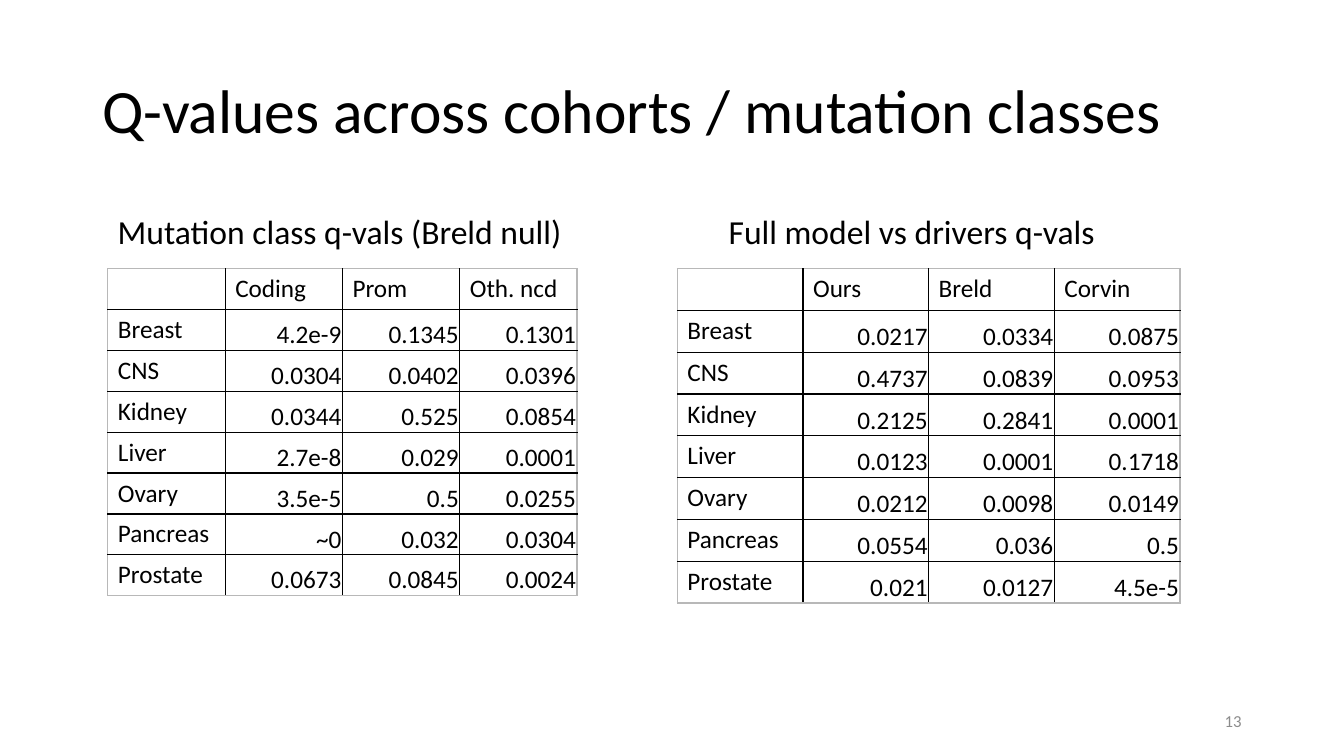
from dataclasses import dataclass

from lxml import etree
from pptx import Presentation
from pptx import util as u
from pptx.dml.color import RGBColor
from pptx.enum import text
from pptx.oxml import ns
from pptx.slide import Slide
from pptx.table import _Cell as Cell
from pptx.text.text import _Paragraph as Paragraph

BLACK = RGBColor(0x00, 0x00, 0x00)
GRAY = RGBColor(0x8C, 0x8C, 0x8C)
FRAME_GRAY = RGBColor(0xB8, 0xB8, 0xB8)
FONT = "Calibri"
TABLE_TOP = 191.9
BORDER_WIDTH = 1
COHORTS = ["Breast", "CNS", "Kidney", "Liver", "Ovary", "Pancreas", "Prostate"]


@dataclass
class Label:
    wording: str
    left: float
    top: float
    width: float
    height: float
    size: float
    color: RGBColor = BLACK
    anchor: text.MSO_ANCHOR = text.MSO_ANCHOR.TOP
    alignment: text.PP_ALIGN = text.PP_ALIGN.LEFT
    line_spacing: float = 1.0


@dataclass
class QValueTable:
    left: float
    column_width: float
    row_height: float
    classes: list[str]
    values: list[list[str]]  # one list per cohort


LABELS = [
    Label("Q-values across cohorts / mutation classes", 66, 28.8, 828, 104.4, 44,
          anchor=text.MSO_ANCHOR.MIDDLE, line_spacing=0.9),
    Label("13", 678, 500.5, 216, 28.75, 12, GRAY,
          text.MSO_ANCHOR.MIDDLE, text.PP_ALIGN.RIGHT),
    Label("Mutation class q-vals (Breld null)", 77.04, 146.88, 340.56, 36, 24),
    Label("Full model vs drivers q-vals", 513.36, 146.88, 298.8, 36, 24),
]

TABLES = [
    QValueTable(77.04, 83.8, 29.2, ["Coding", "Prom", "Oth. ncd"], [
        ["4.2e-9", "0.1345", "0.1301"],
        ["0.0304", "0.0402", "0.0396"],
        ["0.0344", "0.525", "0.0854"],
        ["2.7e-8", "0.029", "0.0001"],
        ["3.5e-5", "0.5", "0.0255"],
        ["~0", "0.032", "0.0304"],
        ["0.0673", "0.0845", "0.0024"],
    ]),
    QValueTable(483.84, 89.75, 29.86, ["Ours", "Breld", "Corvin"], [
        ["0.0217", "0.0334", "0.0875"],
        ["0.4737", "0.0839", "0.0953"],
        ["0.2125", "0.2841", "0.0001"],
        ["0.0123", "0.0001", "0.1718"],
        ["0.0212", "0.0098", "0.0149"],
        ["0.0554", "0.036", "0.5"],
        ["0.021", "0.0127", "4.5e-5"],
    ]),
]


def style_paragraph(paragraph: Paragraph, size: float, color: RGBColor) -> None:
    paragraph.font.name = FONT
    paragraph.font.size = u.Pt(size)
    paragraph.font.color.rgb = color


def add_label(slide: Slide, label: Label) -> None:
    shape = slide.shapes.add_textbox(u.Pt(label.left), u.Pt(label.top),
                                     u.Pt(label.width), u.Pt(label.height))
    frame = shape.text_frame
    frame.word_wrap = True
    frame.vertical_anchor = label.anchor
    paragraph = frame.paragraphs[0]
    paragraph.text = label.wording
    paragraph.alignment = label.alignment
    paragraph.line_spacing = label.line_spacing
    style_paragraph(paragraph, label.size, label.color)


def add_borders(cell: Cell, outer_sides: dict[str, bool]) -> None:
    properties = cell._tc.get_or_add_tcPr()
    # Border lines must precede the cell fill
    for position, (side, is_outer) in enumerate(outer_sides.items()):
        line = etree.Element(ns.qn(side), w=str(u.Pt(BORDER_WIDTH)))
        fill = etree.SubElement(line, ns.qn("a:solidFill"))
        color = FRAME_GRAY if is_outer else BLACK
        etree.SubElement(fill, ns.qn("a:srgbClr"), val=str(color))
        properties.insert(position, line)


def fill_cell(cell: Cell, wording: str, is_value: bool) -> None:
    cell.fill.background()
    paragraph = cell.text_frame.paragraphs[0]
    paragraph.text = wording
    style_paragraph(paragraph, 18, BLACK)
    if is_value:
        paragraph.alignment = text.PP_ALIGN.RIGHT
        cell.vertical_anchor = text.MSO_ANCHOR.BOTTOM
        cell.margin_left = cell.margin_right = cell.margin_top = u.Pt(0.75)
        cell.margin_bottom = u.Pt(0)


def add_q_values(slide: Slide, content: QValueTable) -> None:
    rows = [["", *content.classes]]
    rows += [[cohort, *values] for cohort, values in zip(COHORTS, content.values)]
    columns = len(rows[0])
    table = slide.shapes.add_table(
        len(rows), columns, u.Pt(content.left), u.Pt(TABLE_TOP),
        u.Pt(content.column_width * columns),
        u.Pt(content.row_height * len(rows))).table
    table.first_row = table.horz_banding = False
    for column in table.columns:
        column.width = u.Pt(content.column_width)
    for row_index, row in enumerate(rows):
        table.rows[row_index].height = u.Pt(content.row_height)
        for column_index, wording in enumerate(row):
            cell = table.cell(row_index, column_index)
            fill_cell(cell, wording, row_index > 0 and column_index > 0)
            add_borders(cell, {
                "a:lnL": column_index == 0,
                "a:lnR": column_index == columns - 1,
                "a:lnT": row_index == 0,
                "a:lnB": row_index == len(rows) - 1,
            })


def main() -> None:
    presentation = Presentation()
    presentation.slide_width = u.Pt(960)
    presentation.slide_height = u.Pt(540)
    slide = presentation.slides.add_slide(presentation.slide_layouts[6])

    # Title, slide number and table headings
    for label in LABELS:
        add_label(slide, label)

    # Q-value tables
    for content in TABLES:
        add_q_values(slide, content)

    presentation.save("out.pptx")


if __name__ == "__main__":
    main()
